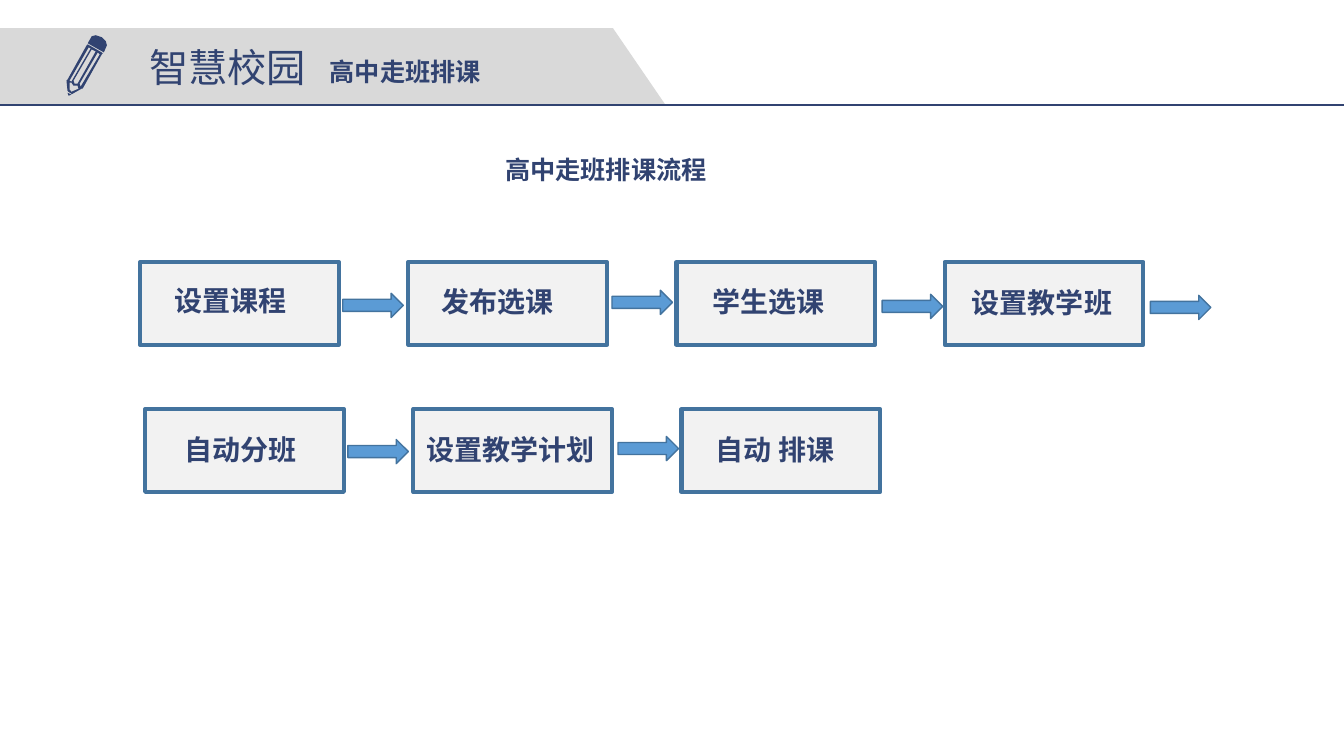
import pptx
import pptx.dml.color
import pptx.enum.shapes
import pptx.enum.text
import pptx.oxml
import pptx.oxml.ns
import pptx.util
import lxml.etree

Inches = pptx.util.Inches
RGBColor = pptx.dml.color.RGBColor
SHAPES = pptx.enum.shapes.MSO_SHAPE

NAVY = RGBColor(0x31, 0x43, 0x71)
BANNER_GREY = RGBColor(0xD9, 0xD9, 0xD9)
STEP_GREY = RGBColor(0xF2, 0xF2, 0xF2)
ARROW_BLUE = RGBColor(0x5B, 0x9B, 0xD5)
EDGE_BLUE = RGBColor(0x43, 0x73, 0x9E)
CJK_FONT = "Noto Sans CJK SC"
SLIDE_WIDTH, SLIDE_HEIGHT = 13.33, 7.5
STEP_WIDTH, STEP_HEIGHT = 1.97, 0.82
ARROW_WIDTH, ARROW_HEIGHT = 0.6, 0.24

BANNER = [[(0, 0), (6.08, 0), (6.6, 0.76), (0, 0.76)]]
PENCIL_CAP = [[(0.25, 0.05), (0.29, 0.04), (0.35, 0.06), (0.39, 0.1),
               (0.4, 0.14), (0.37, 0.21), (0.21, 0.12)]]
PENCIL_BODY = [
    [(0, 0.49), (0.01, 0.59), (0.02, 0.6), (0.05, 0.62), (0.06, 0.62),
     (0.15, 0.57), (0.16, 0.57), (0.35, 0.23), (0.36, 0.22), (0.35, 0.21),
     (0.21, 0.13), (0.2, 0.14), (0.01, 0.48)],
    [(0.03, 0.49), (0.22, 0.16), (0.24, 0.17), (0.06, 0.48), (0.05, 0.5)],
    [(0.05, 0.6), (0.03, 0.58), (0.03, 0.51), (0.05, 0.51), (0.07, 0.54),
     (0.11, 0.54), (0.12, 0.57)],
    [(0.07, 0.49), (0.25, 0.18), (0.29, 0.2), (0.11, 0.52), (0.08, 0.52)],
    [(0.14, 0.55), (0.13, 0.52), (0.31, 0.21), (0.33, 0.23)],
]
PENCIL_TIP = [[(0.05, 0.63), (0.01, 0.61), (0.02, 0.64)]]

FIRST_ROW = [
    ("设置课程", 0.24, 0.16, 1.51, 2.01, 0.31),
    ("发布选课", 0.23, 0.17, 1.51, 2.02, 0.28),
    ("学生选课", 0.26, 0.17, 1.51, 2.04, 0.32),
    ("设置教学班", 0.17, 0.18, 1.71, 2.04, 0.33),
]
SECOND_ROW = [
    ("自动分班", 0.29, 0.18, 1.51, 2.01, 0.3),
    ("设置教学计划", 0.03, 0.18, 1.94, 2.03, 0.27),
    ("自动 排课", 0.24, 0.18, 1.51, None, None),
]


def style_shape(shape, fill, line=None, weight=0):
    """Give a shape a plain fill and an optional outline."""
    shape.shadow.inherit = False
    shape.fill.solid()
    shape.fill.fore_color.rgb = fill
    if line is None:
        shape.line.fill.background()
    else:
        shape.line.color.rgb = line
        shape.line.width = pptx.util.Pt(weight)


def add_outline(page, left, top, contours, fill):
    """Draw closed contours, given in inches from left and top."""
    placed = [[(Inches(left + x), Inches(top + y)) for x, y in contour]
              for contour in contours]
    builder = page.shapes.build_freeform(*placed[0][0])
    for number, contour in enumerate(placed):
        if number:
            builder.move_to(*contour[0])
        builder.add_line_segments(contour[1:], close=True)
    style_shape(builder.convert_to_shape(), fill)


def add_text(page, left, top, width, height, text, size, font=CJK_FONT,
             bold=True, wrap=True, inset=True):
    """Add one line of navy text and return its paragraph."""
    box = page.shapes.add_textbox(Inches(left), Inches(top), Inches(width), Inches(height))
    frame = box.text_frame
    frame.word_wrap = wrap
    if not inset:
        frame.margin_left = frame.margin_right = 0
        frame.margin_top = frame.margin_bottom = 0
    frame.text = text
    para = frame.paragraphs[0]
    span = para.runs[0]
    span.font.name = font
    span.font.size = pptx.util.Pt(size)
    span.font.bold = bold
    span.font.color.rgb = NAVY
    east_asian = lxml.etree.SubElement(span.font._element, pptx.oxml.ns.qn("a:ea"))
    east_asian.set("typeface", CJK_FONT)
    return para


def add_header(page, left, top, width):
    """Draw the banner, pencil, titles and rule from the given corner."""
    add_outline(page, left, top, BANNER, BANNER_GREY)
    for part in (PENCIL_CAP, PENCIL_BODY, PENCIL_TIP):
        add_outline(page, left + 0.66, top + 0.03, part, NAVY)
    add_text(page, left + 1.38, top + 0.1, 1.77, 0.57, "智慧校园", 28, bold=False, wrap=False)
    add_text(page, left + 3.27, top + 0.28, 2.18, 0.3, "高中走班排课", 18, inset=False)
    rule_top = Inches(top + 0.76)
    rule = page.shapes.add_connector(
        pptx.enum.shapes.MSO_CONNECTOR.STRAIGHT,
        Inches(left), rule_top, Inches(left + width), rule_top)
    rule.line.color.rgb = NAVY
    rule.line.width = pptx.util.Pt(1)
    lxml.etree.SubElement(rule._element.spPr, pptx.oxml.ns.qn("a:effectLst"))


def add_step_row(page, left, top, pitch, steps):
    """Draw a row of labelled steps, each followed by its arrow."""
    for number, (label, label_x, label_y, label_width, arrow_x, arrow_y) in enumerate(steps):
        step_left = left + number * pitch
        step = page.shapes.add_shape(
            SHAPES.RECTANGLE, Inches(step_left), Inches(top),
            Inches(STEP_WIDTH), Inches(STEP_HEIGHT))
        style_shape(step, STEP_GREY, EDGE_BLUE, 3)
        add_text(page, step_left + label_x, top + label_y, label_width, 0.44,
                 label, 20, font="Arial")
        if arrow_x is not None:
            arrow = page.shapes.add_shape(
                SHAPES.RIGHT_ARROW, Inches(step_left + arrow_x), Inches(top + arrow_y),
                Inches(ARROW_WIDTH), Inches(ARROW_HEIGHT))
            style_shape(arrow, ARROW_BLUE, EDGE_BLUE, 1)


def add_flow(page, left, top):
    """Draw the flow title and both rows of steps from the given corner."""
    title = add_text(page, left + 3.62, top, 2.57, 0.3, "高中走班排课流程", 18, inset=False)
    title.alignment = pptx.enum.text.PP_ALIGN.JUSTIFY
    add_step_row(page, left, top + 1.07, 2.66, FIRST_ROW)
    add_step_row(page, left + 0.05, top + 2.53, 2.66, SECOND_ROW)


def main():
    """Build the course scheduling slide and save it."""
    deck = pptx.Presentation()
    deck.slide_width = Inches(SLIDE_WIDTH)
    deck.slide_height = Inches(SLIDE_HEIGHT)
    page = deck.slides.add_slide(deck.slide_layouts[6])
    add_header(page, 0, 0.28, SLIDE_WIDTH)
    add_flow(page, 1.39, 1.53)
    deck.save("out.pptx")


if __name__ == "__main__":
    main()
